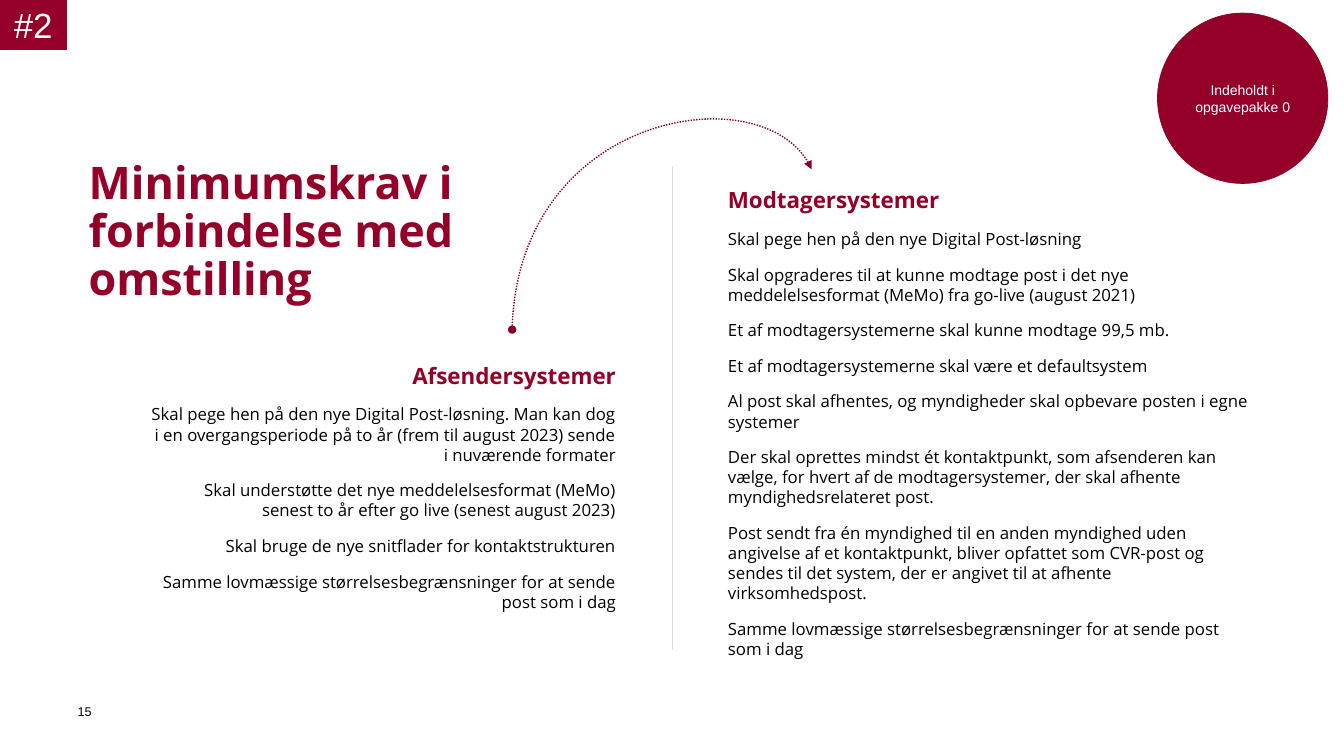
from dataclasses import dataclass
from typing import Any

from lxml.etree import SubElement
from pptx import Presentation
from pptx.dml.color import RGBColor as Rgb
from pptx.enum.dml import MSO_LINE as Dash
from pptx.enum.shapes import MSO_CONNECTOR as Link, MSO_SHAPE as Form
from pptx.enum.text import MSO_ANCHOR as Anchor, MSO_AUTO_SIZE as Fit, PP_ALIGN as Align
from pptx.oxml.ns import qn
from pptx.util import Pt

PX = 9144


@dataclass(frozen=True)
class Theme:
    wine: str = "940027"
    arc: str = "890023"
    rule: str = "DBD9D6"
    ink: str = "000000"
    white: str = "FFFFFF"
    sans: str = "Open Sans"
    plain: str = "Arial"
    title: int = 32
    tag: int = 25
    head: int = 16
    body: int = 12
    note: int = 10
    page: int = 9
    gap: int = 11


@dataclass(frozen=True)
class Box:
    left: int
    top: int
    width: int
    height: int

    def emu(self) -> list[int]:
        return [n * PX for n in (self.left, self.top, self.width, self.height)]


@dataclass(frozen=True)
class Column:
    box: Box
    align: Align
    head: str
    items: tuple[str, ...]


@dataclass(frozen=True)
class Badge:
    box: Box
    form: Form
    words: str
    size: int


THEME = Theme()
SHARED = "Samme lovmæssige størrelsesbegrænsninger for at sende post som i dag"
COLUMNS = (
    Column(Box(722, 185, 521, 422), Align.LEFT, "Modtagersystemer", (
        "Skal pege hen på den nye Digital Post-løsning",
        "Skal opgraderes til at kunne modtage post i det nye meddelelsesformat (MeMo) "
        "fra go-live (august 2021)",
        "Et af modtagersystemerne skal kunne modtage 99,5 mb.",
        "Et af modtagersystemerne skal være et defaultsystem",
        "Al post skal afhentes, og myndigheder skal opbevare posten i egne systemer",
        "Der skal oprettes mindst ét kontaktpunkt, som afsenderen kan vælge, for hvert "
        "af de modtagersystemer, der skal afhente myndighedsrelateret post.",
        "Post sendt fra én myndighed til en anden myndighed uden angivelse af et "
        "kontaktpunkt, bliver opfattet som CVR-post og sendes til det system, der er "
        "angivet til at afhente virksomhedspost.",
        SHARED,
    )),
    Column(Box(149, 359, 462, 247), Align.RIGHT, "Afsendersystemer", (
        "Skal pege hen på den nye Digital Post-løsning. Man kan dog i en "
        "overgangsperiode på to år (frem til august 2023) sende i nuværende formater",
        "Skal understøtte det nye meddelelsesformat (MeMo) senest to år efter go live "
        "(senest august 2023)",
        "Skal bruge de nye snitflader for kontaktstrukturen",
        SHARED,
    )),
)
BADGES = (
    Badge(Box(1148, 13, 169, 169), Form.OVAL, "Indeholdt i opgavepakke 0", THEME.note),
    Badge(Box(0, 0, 66, 49), Form.RECTANGLE, "#2", THEME.tag),
)
ARC = ((508, 327), (513, 112), (764, 73), (805, 168))


def write(frame: Any, words: str, *, size: int, color: str, font: str = THEME.sans,
          bold: bool = False, align: Align = Align.LEFT, gap: int = 0,
          lead: float | None = None, more: bool = False) -> None:
    para = frame.add_paragraph() if more else frame.paragraphs[0]
    para.alignment = align
    para.space_before = Pt(gap)
    if lead:
        para.line_spacing = lead
    run = para.add_run()
    run.text = words
    run.font.size, run.font.name, run.font.bold = Pt(size), font, bold
    run.font.color.rgb = Rgb.from_string(color)


def setup(frame: Any, right: int = 0) -> Any:
    frame.word_wrap = True
    frame.auto_size = Fit.NONE
    frame.vertical_anchor = Anchor.TOP
    frame.margin_left = frame.margin_top = frame.margin_bottom = 0
    frame.margin_right = right * PX
    return frame


def stroke(line: Any, color: str, width: float) -> None:
    line.color.rgb = Rgb.from_string(color)
    line.width = Pt(width)


def draw_title(shape: Any, box: Box) -> None:
    shape.left, shape.top, shape.width, shape.height = box.emu()
    write(setup(shape.text_frame, 113), "Minimumskrav i forbindelse med omstilling",
          size=THEME.title, color=THEME.wine, bold=True, lead=0.9)


def draw_column(shapes: Any, col: Column) -> None:
    frame = setup(shapes.add_textbox(*col.box.emu()).text_frame)
    write(frame, col.head, size=THEME.head, color=THEME.wine, bold=True, align=col.align)
    for item in col.items:
        write(frame, item, size=THEME.body, color=THEME.ink, align=col.align,
              gap=THEME.gap, more=True)


def draw_rule(shapes: Any, x: int, top: int, end: int) -> None:
    rule = shapes.add_connector(Link.STRAIGHT, x * PX, top * PX, x * PX, end * PX)
    stroke(rule.line, THEME.rule, 0.25)
    SubElement(rule._element.spPr, qn("a:effectLst"))


def draw_arc(shapes: Any, points: tuple[tuple[int, int], ...]) -> None:
    pen = shapes.build_freeform(*points[0], scale=PX)
    pen.add_line_segments(points[1:], close=False)
    arc = pen.convert_to_shape()
    arc.shadow.inherit = False
    arc.fill.background()
    stroke(arc.line, THEME.arc, 1)
    arc.line.dash_style = Dash.ROUND_DOT
    props = arc._element.spPr
    line = props.find(qn("a:ln"))
    SubElement(line, qn("a:headEnd"), type="oval")
    SubElement(line, qn("a:tailEnd"), type="triangle")
    route = next(props.iter(qn("a:path")))
    steps = route.findall(qn("a:lnTo"))
    curve = SubElement(route, qn("a:cubicBezTo"))
    for step in steps:
        curve.append(step[0])
        route.remove(step)


def draw_badge(shapes: Any, badge: Badge) -> None:
    shape = shapes.add_shape(badge.form, *badge.box.emu())
    shape.shadow.inherit = False
    shape.fill.solid()
    shape.fill.fore_color.rgb = Rgb.from_string(THEME.wine)
    stroke(shape.line, THEME.wine, 0.5)
    frame = shape.text_frame
    frame.word_wrap = True
    frame.vertical_anchor = Anchor.MIDDLE
    write(frame, badge.words, size=badge.size, color=THEME.white, font=THEME.plain,
          align=Align.CENTER)


def main() -> None:
    deck = Presentation()
    deck.slide_width, deck.slide_height = 1333 * PX, 750 * PX
    slide = deck.slides.add_slide(deck.slide_layouts[5])
    shapes = slide.shapes
    draw_title(shapes.title, Box(88, 159, 522, 162))
    page = shapes.add_textbox(*Box(77, 698, 31, 39).emu())
    write(setup(page.text_frame), "15", size=THEME.page, color=THEME.ink, font=THEME.plain)
    for col in COLUMNS:
        draw_column(shapes, col)
    draw_arc(shapes, ARC)
    draw_rule(shapes, 667, 165, 645)
    for badge in BADGES:
        draw_badge(shapes, badge)
    deck.save("out.pptx")


if __name__ == "__main__":
    main()
